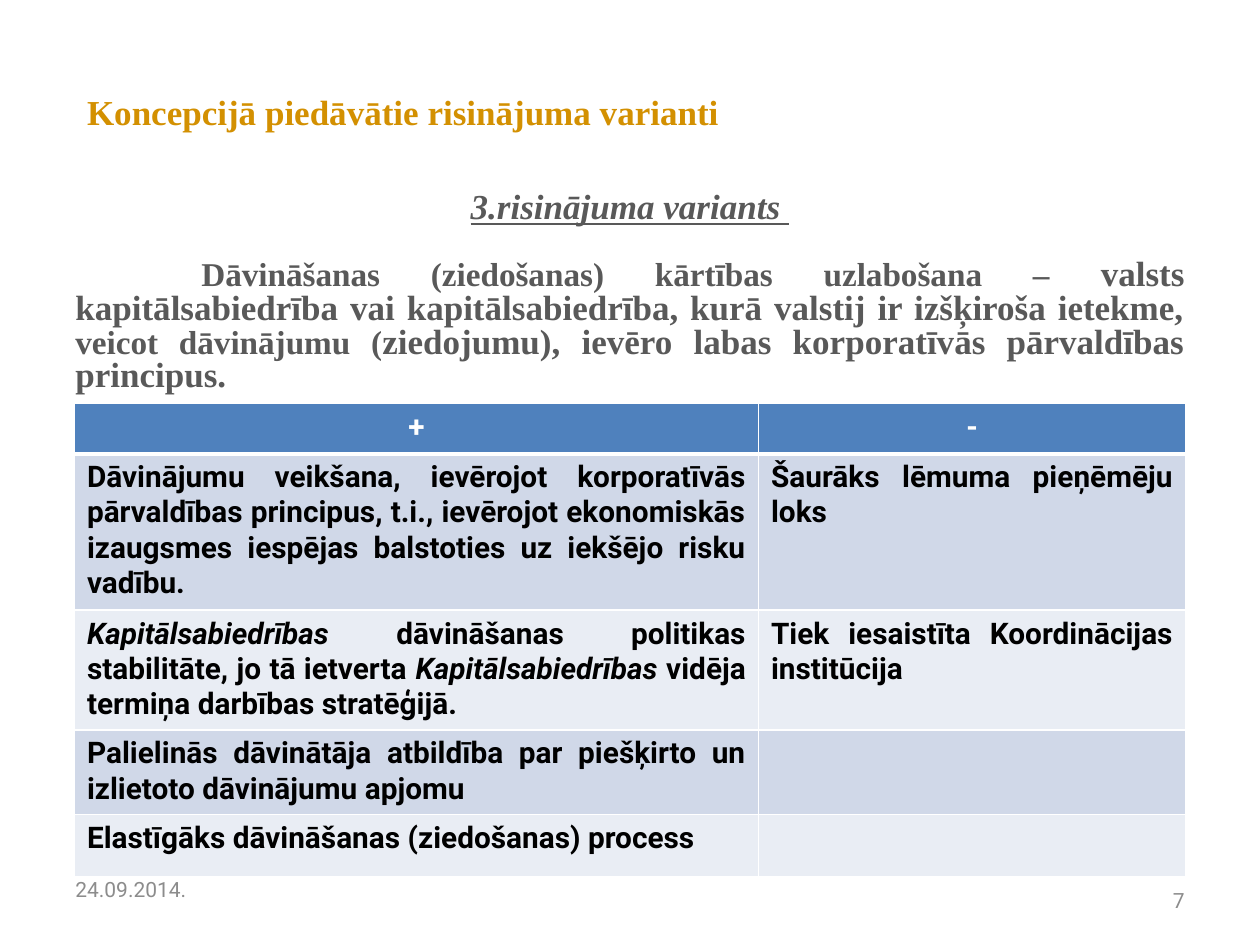
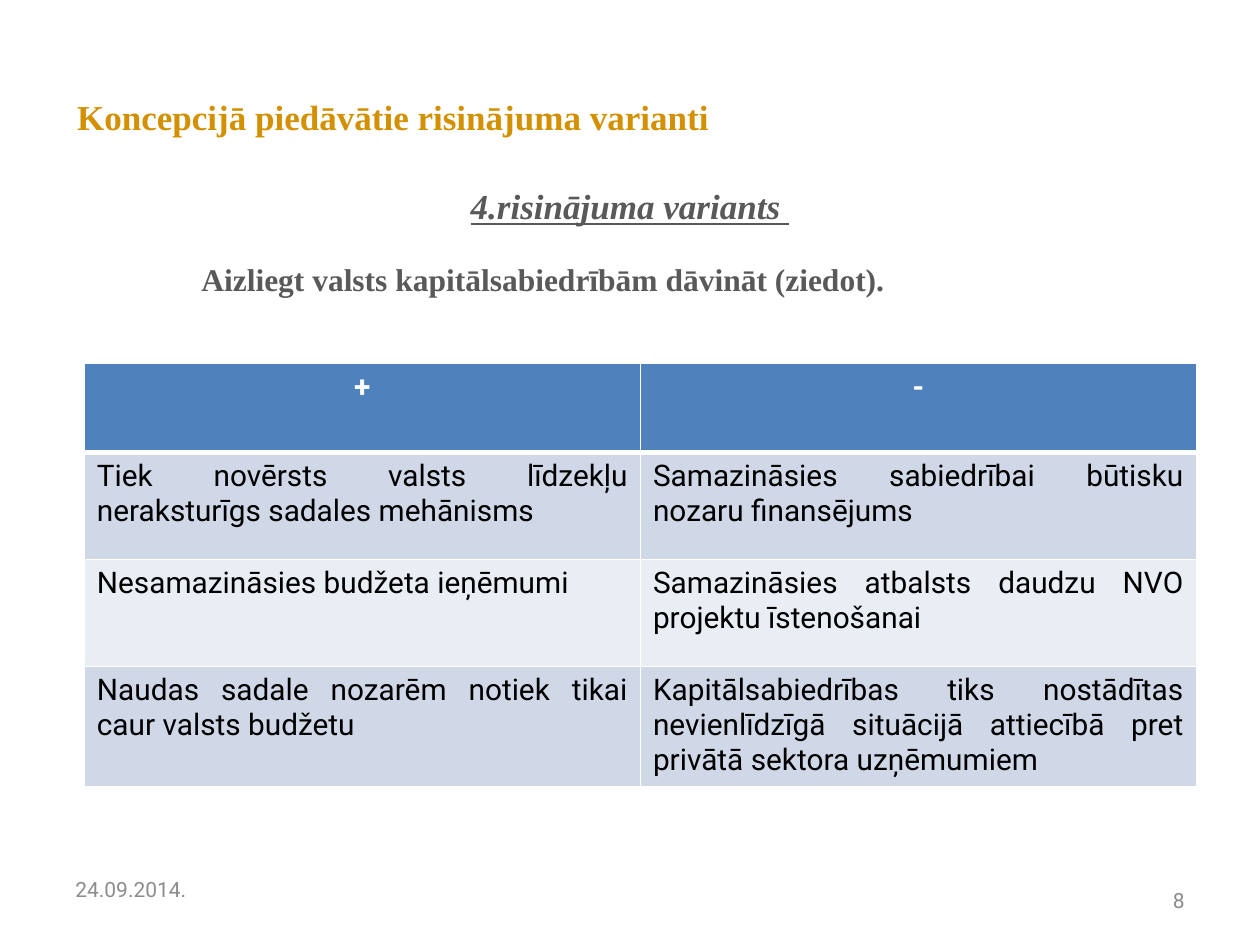
from lxml.etree import SubElement
from pptx import Presentation
from pptx.dml.color import RGBColor
from pptx.enum.text import MSO_ANCHOR, PP_ALIGN
from pptx.oxml.ns import qn
from pptx.util import Cm, Pt

COLORS = {
    "title": "D39001",
    "body": "595959",
    "footer": "8C8C8C",
    "header": "4F81BD",
    "band_dark": "D0D8E8",
    "band_light": "E9EDF4",
    "white": "FFFFFF",
    "black": "000000",
}
SERIF = "Times New Roman"
SANS = "Roboto"
TITLE = "Koncepcijā piedāvātie risinājuma varianti"
DATE = "24.09.2014."


def format_run(run, font_name, size, color, bold=False, italic=False, underline=False):
    font = run.font
    font.name = font_name
    font.size = Pt(size)
    font.color.rgb = RGBColor.from_string(COLORS[color])
    font.bold = bold
    font.italic = italic
    font.underline = underline


def add_text_box(slide, left, top, width, height):
    shape = slide.shapes.add_textbox(Cm(left), Cm(top), Cm(width), Cm(height))
    shape.text_frame.word_wrap = True
    return shape.text_frame


def add_title(slide, left, top, height):
    title = slide.shapes.title
    title.left, title.top = Cm(left), Cm(top)
    title.width, title.height = Cm(15.8), Cm(height)
    frame = title.text_frame
    frame.text = TITLE
    frame.vertical_anchor = MSO_ANCHOR.MIDDLE
    paragraph = frame.paragraphs[0]
    paragraph.alignment = PP_ALIGN.LEFT
    format_run(paragraph.runs[0], SERIF, 20, "title", bold=True)


def add_footer(slide, text, left, top, alignment):
    frame = add_text_box(slide, left, top, 5.92, 1.01)
    frame.text = text
    frame.vertical_anchor = MSO_ANCHOR.MIDDLE
    paragraph = frame.paragraphs[0]
    paragraph.alignment = alignment
    format_run(paragraph.runs[0], SANS, 12, "footer")


def add_variant(slide, heading, description, alignment, line_spacing):
    """Underlined heading over an indented paragraph of (text, size) pieces."""
    frame = add_text_box(slide, 1.27, 3.6, 22.86, 13.49)
    frame.text = heading
    paragraph = frame.paragraphs[0]
    paragraph.alignment = PP_ALIGN.CENTER
    format_run(paragraph.runs[0], SERIF, 20, "body", True, True, True)

    paragraph = frame.add_paragraph()
    paragraph.alignment = alignment
    paragraph.line_spacing = line_spacing
    paragraph.space_before = Pt(19)
    paragraph._p.get_or_add_pPr().set("indent", str(Cm(2.54)))
    for text, size in description:
        run = paragraph.add_run()
        run.text = text
        format_run(run, SERIF, size, "body", bold=True)


def set_borders(cell, top=1, bottom=1):
    """Add white borders; must run before the cell is filled."""
    properties = cell._tc.get_or_add_tcPr()
    for tag, width in (("lnL", 1), ("lnR", 1), ("lnT", top), ("lnB", bottom)):
        line = SubElement(properties, qn(f"a:{tag}"), w=str(Pt(width)))
        fill = SubElement(line, qn("a:solidFill"))
        SubElement(fill, qn("a:srgbClr"), val=COLORS["white"])


def fill_cell(cell, text, row_index, bold):
    """Write one cell; words between asterisks are italic."""
    is_header = row_index == 0
    set_borders(cell, top=3 if row_index == 1 else 1, bottom=3 if is_header else 1)
    band = "header" if is_header else ("band_light", "band_dark")[row_index % 2]
    cell.fill.solid()
    cell.fill.fore_color.rgb = RGBColor.from_string(COLORS[band])

    paragraph = cell.text_frame.paragraphs[0]
    paragraph.alignment = PP_ALIGN.CENTER if is_header else PP_ALIGN.JUSTIFY
    for index, piece in enumerate(text.split("*")):
        if piece:
            run = paragraph.add_run()
            run.text = piece
            format_run(run, SANS, 17, "white" if is_header else "black",
                       bold=bold or is_header, italic=index % 2 == 1)


def add_pros_and_cons(slide, left, top, widths, heights, arguments, bold):
    rows = [("+", "-"), *arguments]
    table = slide.shapes.add_table(len(rows), 2, Cm(left), Cm(top),
                                   Cm(sum(widths)), Cm(sum(heights))).table
    for column, width in zip(table.columns, widths):
        column.width = Cm(width)
    for row_index, (height, texts) in enumerate(zip(heights, rows)):
        table.rows[row_index].height = Cm(height)
        for column_index, text in enumerate(texts):
            fill_cell(table.cell(row_index, column_index), text, row_index, bold)


def add_slide(presentation, number):
    slide = presentation.slides.add_slide(presentation.slide_layouts[5])
    add_footer(slide, DATE, 1.27, 17.42, PP_ALIGN.LEFT)
    add_footer(slide, str(number), 18.21, 17.65, PP_ALIGN.RIGHT)
    return slide


def add_improvement_slide(presentation):
    slide = add_slide(presentation, 7)
    add_variant(slide, "3.risinājuma variants ", [
        ("Dāvināšanas (ziedošanas) kārtības uzlabošana – ", 19),
        ("valsts kapitālsabiedrība vai kapitālsabiedrība, kurā valstij "
         "ir izšķiroša ietekme, ", 20),
        ("veicot dāvinājumu (", 19),
        ("ziedojumu), ievēro labas korporatīvās pārvaldības principus.", 20),
    ], PP_ALIGN.JUSTIFY, 0.8)
    add_title(slide, 1.5, 1.56, 1.37)
    add_pros_and_cons(slide, 1.5, 8.13, [13.79, 8.61], [1.02, 3.15, 2.41, 1.7, 1.25], [
        ("Dāvinājumu veikšana, ievērojot korporatīvās pārvaldības principus, t.i., "
         "ievērojot ekonomiskās izaugsmes iespējas balstoties uz iekšējo risku vadību.",
         "Šaurāks lēmuma pieņēmēju loks"),
        ("*Kapitālsabiedrības* dāvināšanas politikas stabilitāte, jo tā ietverta "
         "*Kapitālsabiedrības* vidēja termiņa darbības stratēģijā.",
         "Tiek iesaistīta Koordinācijas institūcija"),
        ("Palielinās dāvinātāja atbildība par piešķirto un izlietoto dāvinājumu apjomu", ""),
        ("Elastīgāks dāvināšanas (ziedošanas) process", ""),
    ], bold=True)


def add_prohibition_slide(presentation):
    slide = add_slide(presentation, 8)
    add_variant(slide, "4.risinājuma variants ", [
        ("Aizliegt valsts kapitālsabiedrībām dāvināt (ziedot).", 18),
    ], PP_ALIGN.LEFT, 1.0)
    add_title(slide, 1.3, 1.75, 1.19)
    add_pros_and_cons(slide, 1.7, 7.32, [11.21, 11.21], [1.8, 2.16, 2.16, 2.36], [
        ("Tiek novērsts valsts līdzekļu neraksturīgs sadales mehānisms",
         "Samazināsies sabiedrībai būtisku nozaru finansējums"),
        ("Nesamazināsies budžeta ieņēmumi",
         "Samazināsies atbalsts daudzu NVO projektu īstenošanai"),
        ("Naudas sadale nozarēm notiek tikai caur valsts budžetu",
         "Kapitālsabiedrības tiks nostādītas nevienlīdzīgā situācijā attiecībā "
         "pret privātā sektora uzņēmumiem"),
    ], bold=False)


def main():
    presentation = Presentation()
    presentation.slide_width = Cm(25.4)
    presentation.slide_height = Cm(19.05)
    add_improvement_slide(presentation)
    add_prohibition_slide(presentation)
    presentation.save("out.pptx")


if __name__ == "__main__":
    main()
